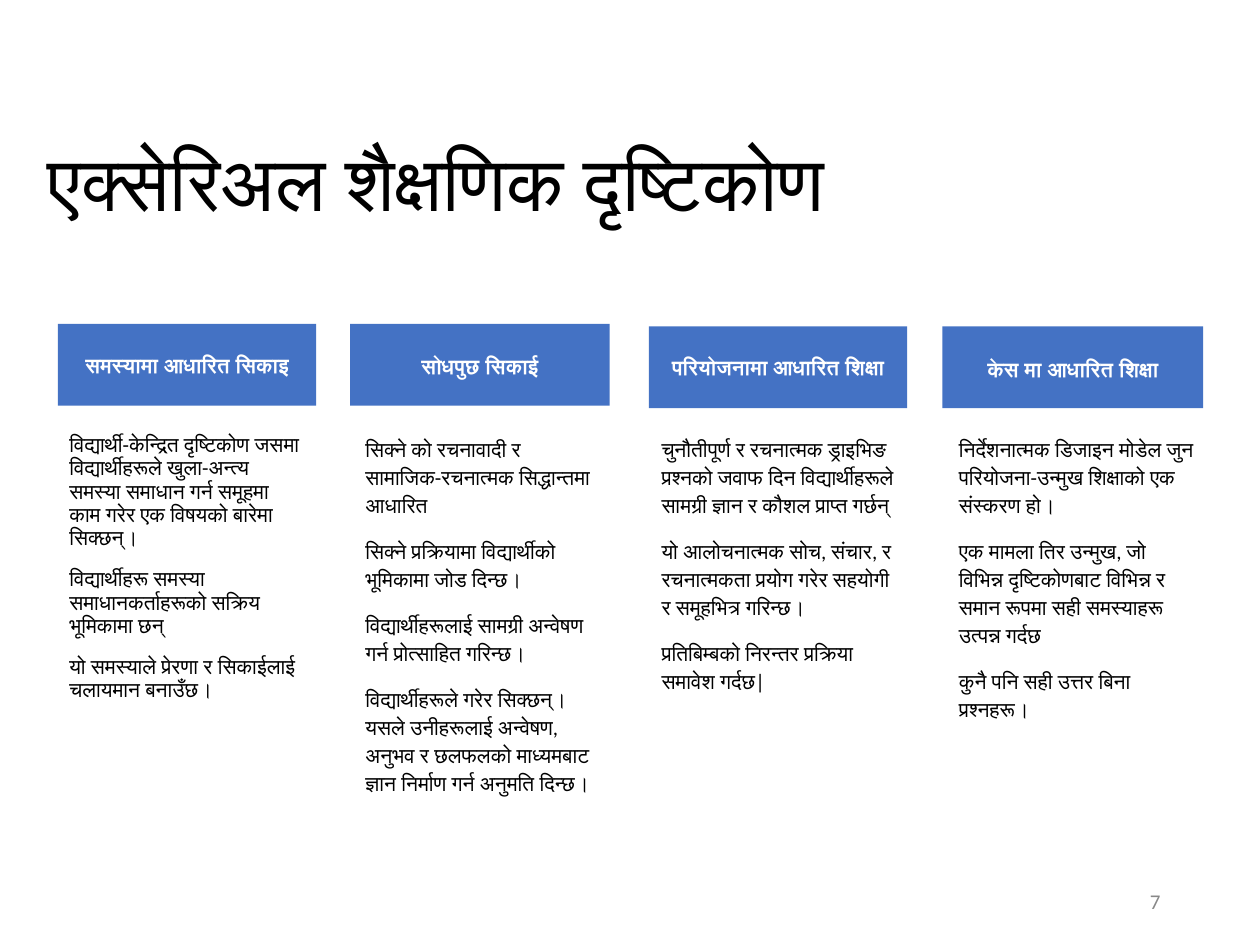
from dataclasses import dataclass

from lxml import etree
from pptx import Presentation
from pptx.dml.color import RGBColor
from pptx.enum import shapes, text
from pptx.oxml import ns
from pptx.util import Inches, Pt

BLACK = RGBColor(0x00, 0x00, 0x00)
WHITE = RGBColor(0xFF, 0xFF, 0xFF)
BLUE = RGBColor(0x44, 0x72, 0xC4)
GRAY = RGBColor(0x88, 0x88, 0x88)
FONT = "Calibri"
COMPARISON_LAYOUT = 4


@dataclass
class Approach:
    name: str
    points: list
    header_box: tuple
    body_box: tuple
    header_spacing: float = 1.12
    body_spacing: float = 1.12


APPROACHES = [
    Approach(
        "समस्यामा आधारित सिकाइ",
        [
            "विद्यार्थी-केन्द्रित दृष्टिकोण जसमा विद्यार्थीहरूले खुला-अन्त्य समस्या समाधान गर्न समूहमा काम गरेर एक विषयको बारेमा सिक्छन्।",
            "विद्यार्थीहरू समस्या समाधानकर्ताहरूको सक्रिय भूमिकामा छन्",
            "यो समस्याले प्रेरणा र सिकाईलाई चलायमान बनाउँछ।",
        ],
        (0.46, 2.57, 2.05, 0.65), (0.45, 3.39, 2.04, 2.61), 1.02, 0.93,
    ),
    Approach(
        "सोधपुछ सिकाई",
        [
            "सिक्ने को रचनावादी र सामाजिक-रचनात्मक सिद्धान्तमा आधारित",
            "सिक्ने प्रक्रियामा विद्यार्थीको भूमिकामा जोड दिन्छ।",
            "विद्यार्थीहरूलाई सामग्री अन्वेषण गर्न प्रोत्साहित गरिन्छ।",
            "विद्यार्थीहरूले गरेर सिक्छन्। यसले उनीहरूलाई अन्वेषण, अनुभव र छलफलको माध्यमबाट ज्ञान निर्माण गर्न अनुमति दिन्छ।",
        ],
        (2.78, 2.57, 2.06, 0.65), (2.8, 3.39, 2.06, 2.91),
    ),
    Approach(
        "परियोजनामा आधारित शिक्षा",
        [
            "चुनौतीपूर्ण र रचनात्मक ड्राइभिङ प्रश्नको जवाफ दिन विद्यार्थीहरूले सामग्री ज्ञान र कौशल प्राप्त गर्छन्",
            "यो आलोचनात्मक सोच, संचार, र रचनात्मकता प्रयोग गरेर सहयोगी र समूहभित्र गरिन्छ।",
            "प्रतिबिम्बको निरन्तर प्रक्रिया समावेश गर्दछ|",
        ],
        (5.15, 2.59, 2.05, 0.65), (5.15, 3.39, 2.06, 2.61), 1.02,
    ),
    Approach(
        "केस मा आधारित शिक्षा",
        [
            "निर्देशनात्मक डिजाइन मोडेल जुन परियोजना-उन्मुख शिक्षाको एक संस्करण हो।",
            "एक मामला तिर उन्मुख, जो विभिन्न दृष्टिकोणबाट विभिन्न र समान रूपमा सही समस्याहरू उत्पन्न गर्दछ",
            "कुनै पनि सही उत्तर बिना प्रश्नहरू।",
        ],
        (7.48, 2.59, 2.07, 0.65), (7.51, 3.39, 2.07, 2.61),
    ),
]


def place(item, box):
    item.left, item.top, item.width, item.height = map(Inches, box)


def remove_bullet(paragraph):
    properties = paragraph._p.get_or_add_pPr()
    properties.set("marL", "0")
    properties.set("indent", "0")
    etree.SubElement(properties, ns.qn("a:buNone"))


def write(item, lines, size=12, color=BLACK, bold=False, align=text.PP_ALIGN.LEFT,
          anchor=text.MSO_ANCHOR.MIDDLE, spacing=1.0, gap=0, margins=(0.1, 0.05)):
    frame = item.text_frame
    frame.word_wrap = True
    frame.auto_size = text.MSO_AUTO_SIZE.NONE
    frame.vertical_anchor = anchor
    frame.margin_left = frame.margin_right = Inches(margins[0])
    frame.margin_top = frame.margin_bottom = Inches(margins[1])
    for index, line in enumerate(lines):
        paragraph = frame.add_paragraph() if index else frame.paragraphs[0]
        remove_bullet(paragraph)
        paragraph.alignment = align
        paragraph.line_spacing = spacing
        paragraph.space_before = Pt(gap if index else 0)
        paragraph.space_after = Pt(0)
        run = paragraph.add_run()
        run.text = line
        run.font.name = FONT
        run.font.size = Pt(size)
        run.font.bold = bold
        run.font.color.rgb = color


def add_title(slide, wording):
    title = slide.shapes.title
    place(title, (0.28, 0.98, 9.12, 1))
    write(title, [wording], size=44, spacing=0.9)


def add_header(slide, approach):
    header = slide.shapes.add_shape(
        shapes.MSO_SHAPE.RECTANGLE, *map(Inches, approach.header_box))
    header.shadow.inherit = False
    header.fill.solid()
    header.fill.fore_color.rgb = BLUE
    header.line.fill.background()
    write(header, [approach.name], color=WHITE, bold=True, align=text.PP_ALIGN.CENTER,
          spacing=approach.header_spacing, margins=(0.16, 0.12))


def fill_body(body, approach):
    place(body, approach.body_box)
    write(body, approach.points, anchor=text.MSO_ANCHOR.TOP,
          spacing=approach.body_spacing, gap=10)


def add_page_number(slide, number):
    page = slide.shapes.add_textbox(*map(Inches, (7.06, 6.95, 2.25, 0.4)))
    write(page, [str(number)], color=GRAY, align=text.PP_ALIGN.RIGHT)


def main():
    deck = Presentation()
    deck.slide_width, deck.slide_height = Inches(10), Inches(7.5)
    slide = deck.slides.add_slide(deck.slide_layouts[COMPARISON_LAYOUT])
    add_title(slide, "एक्सेरिअल शैक्षणिक दृष्टिकोण")
    bodies = list(slide.placeholders)[1:]
    for approach, body in zip(APPROACHES, bodies):
        add_header(slide, approach)
        fill_body(body, approach)
    add_page_number(slide, 7)
    deck.save("out.pptx")


if __name__ == "__main__":
    main()
